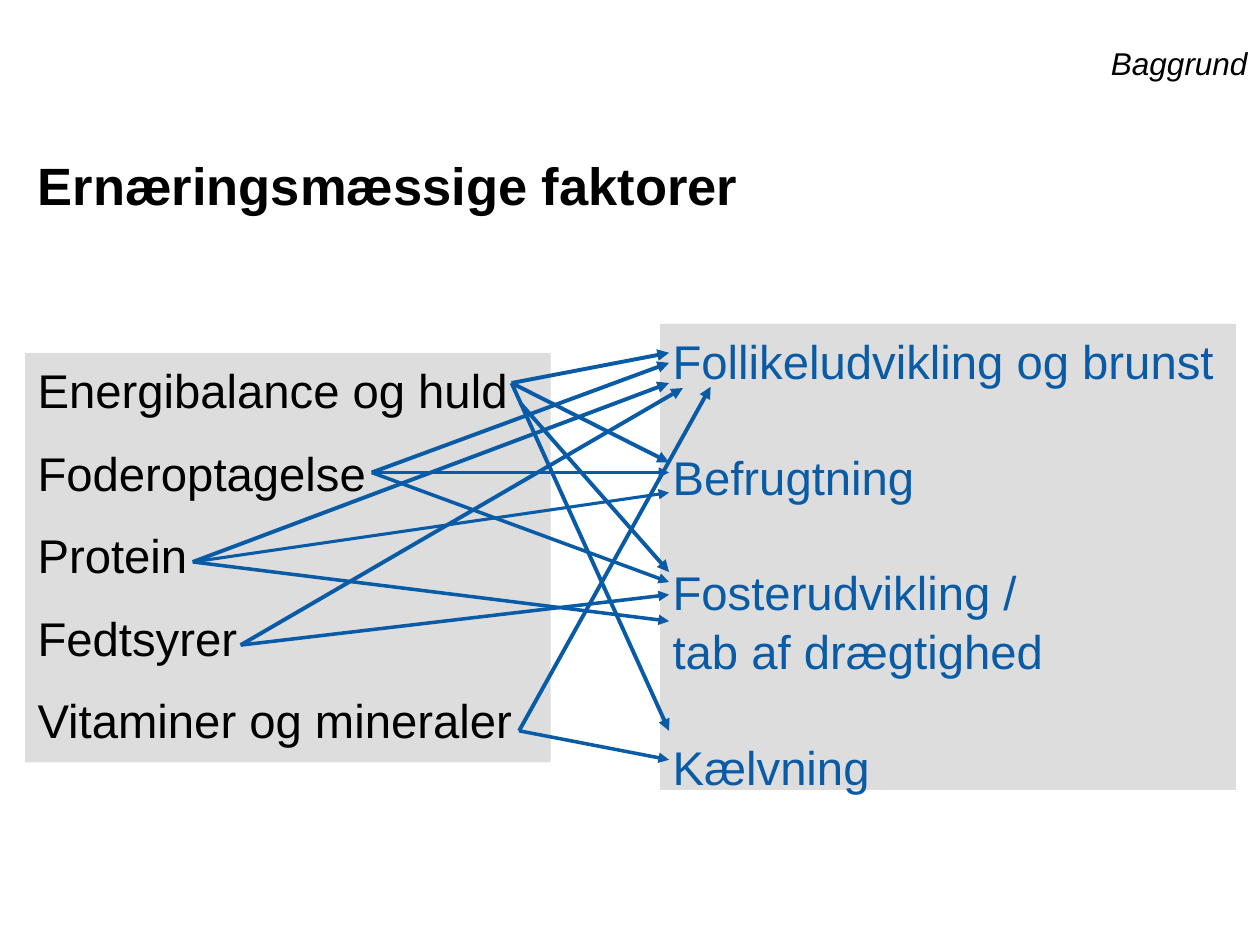
from lxml import etree
from pptx import Presentation
from pptx.dml.color import RGBColor
from pptx.enum.shapes import MSO_CONNECTOR, MSO_SHAPE
from pptx.enum.text import MSO_ANCHOR, PP_ALIGN
from pptx.oxml.ns import qn
from pptx.util import Inches, Pt

RECTANGLE, STRAIGHT = MSO_SHAPE.RECTANGLE, MSO_CONNECTOR.STRAIGHT
TOP, MIDDLE = MSO_ANCHOR.TOP, MSO_ANCHOR.MIDDLE
LEFT, RIGHT = PP_ALIGN.LEFT, PP_ALIGN.RIGHT

BLACK, BLUE, GREY = "000000", "095BA6", "DDDDDD"
BODY_SIZE, LINE_SPACING = 27, 1.045
FACTOR_GAP = BODY_SIZE / 2
EFFECT_GAP = 32.4  # one line of body text

TITLE = "Ernæringsmæssige faktorer"
SECTION = "Baggrund"
# (text, space before in points)
EFFECTS = [
    ("Follikeludvikling og brunst", 0),
    ("Befrugtning", EFFECT_GAP),
    ("Fosterudvikling /", EFFECT_GAP),
    ("tab af drægtighed", 0),
    ("Kælvning", EFFECT_GAP),
]
FACTOR_NAMES = ["Energibalance og huld", "Foderoptagelse", "Protein",
                "Fedtsyrer", "Vitaminer og mineraler"]
FACTORS = [(name, FACTOR_GAP if row else 0)
           for row, name in enumerate(FACTOR_NAMES)]

EDGE = 5.31  # where most arrows meet the effects
# start of each arrow: (end x, end y, line width)
ENERGY, INTAKE, PROTEIN = (4.06, 3.04), (2.95, 3.75), (1.53, 4.46)
ARROWS = [
    (ENERGY, [(EDGE, 2.8, 2.25), (EDGE, 3.67, 2.25), (EDGE, 5.8, 2.25)]),
    ((4.13, 3.2), [(EDGE, 4.54, 2.25)]),
    (INTAKE, [(EDGE, 2.88, 2.25), (EDGE, 3.75, 1.75), (EDGE, 4.62, 2)]),
    (PROTEIN, [(EDGE, 3.04, 2.25), (EDGE, 3.91, 1.75), (EDGE, 4.93, 2)]),
    ((4.12, 5.8), [(EDGE, 6.03, 2), (5.64, 3.07, 2.25)]),
    ((1.91, 5.12), [(5.42, 3.08, 2.25), (EDGE, 4.72, 2)]),
]


def rgb(value):
    return RGBColor.from_string(value)


def inches(*lengths):
    return [Inches(length) for length in lengths]


def write(frame, lines, size, color, anchor=TOP, align=LEFT, spacing=1.0,
          bold=False, italic=False):
    frame.word_wrap = True
    frame.vertical_anchor = anchor
    for row, (text, gap) in enumerate(lines):
        paragraph = frame.add_paragraph() if row else frame.paragraphs[0]
        paragraph.alignment = align
        paragraph.line_spacing = spacing
        paragraph.space_before = Pt(gap)
        run = paragraph.add_run()
        run.text = text
        font = run.font
        font.name, font.size = "Arial", Pt(size)
        font.bold, font.italic = bold, italic
        font.color.rgb = rgb(color)


def add_panel(slide, place, lines, color):
    panel = slide.shapes.add_shape(RECTANGLE, *inches(*place))
    panel.shadow.inherit = False
    panel.fill.solid()
    panel.fill.fore_color.rgb = rgb(GREY)
    panel.line.fill.background()
    write(panel.text_frame, lines, BODY_SIZE, color, spacing=LINE_SPACING)


def add_arrow(shapes, start, end, width):
    arrow = shapes.add_connector(STRAIGHT, *inches(*start, *end))
    arrow.line.color.rgb = rgb(BLUE)
    arrow.line.width = Pt(width)
    etree.SubElement(arrow.line._get_or_add_ln(), qn("a:tailEnd"),
                     type="triangle")
    etree.SubElement(arrow._element.spPr, qn("a:effectLst"))


def main():
    deck = Presentation()
    deck.slide_width, deck.slide_height = inches(10, 7.5)
    slide = deck.slides.add_slide(deck.slide_layouts[5])

    title = slide.shapes.title
    title.left, title.top, title.width, title.height = inches(
        0.2, 0.84, 7.17, 1.25)
    write(title.text_frame, [(TITLE, 0)], 30, BLACK, anchor=MIDDLE, bold=True)

    add_panel(slide, (5.24, 2.57, 4.57, 3.7), EFFECTS, BLUE)
    add_panel(slide, (0.2, 2.8, 4.17, 3.25), FACTORS, BLACK)

    arrows = slide.shapes.add_group_shape().shapes
    for start, ends in ARROWS:
        for x, y, width in ends:
            add_arrow(arrows, start, (x, y), width)

    section = slide.shapes.add_textbox(*inches(8.23, 0.3, 1.77, 0.7))
    write(section.text_frame, [(SECTION, 0)], 18, BLACK, align=RIGHT,
          italic=True)
    deck.save("out.pptx")


if __name__ == "__main__":
    main()
